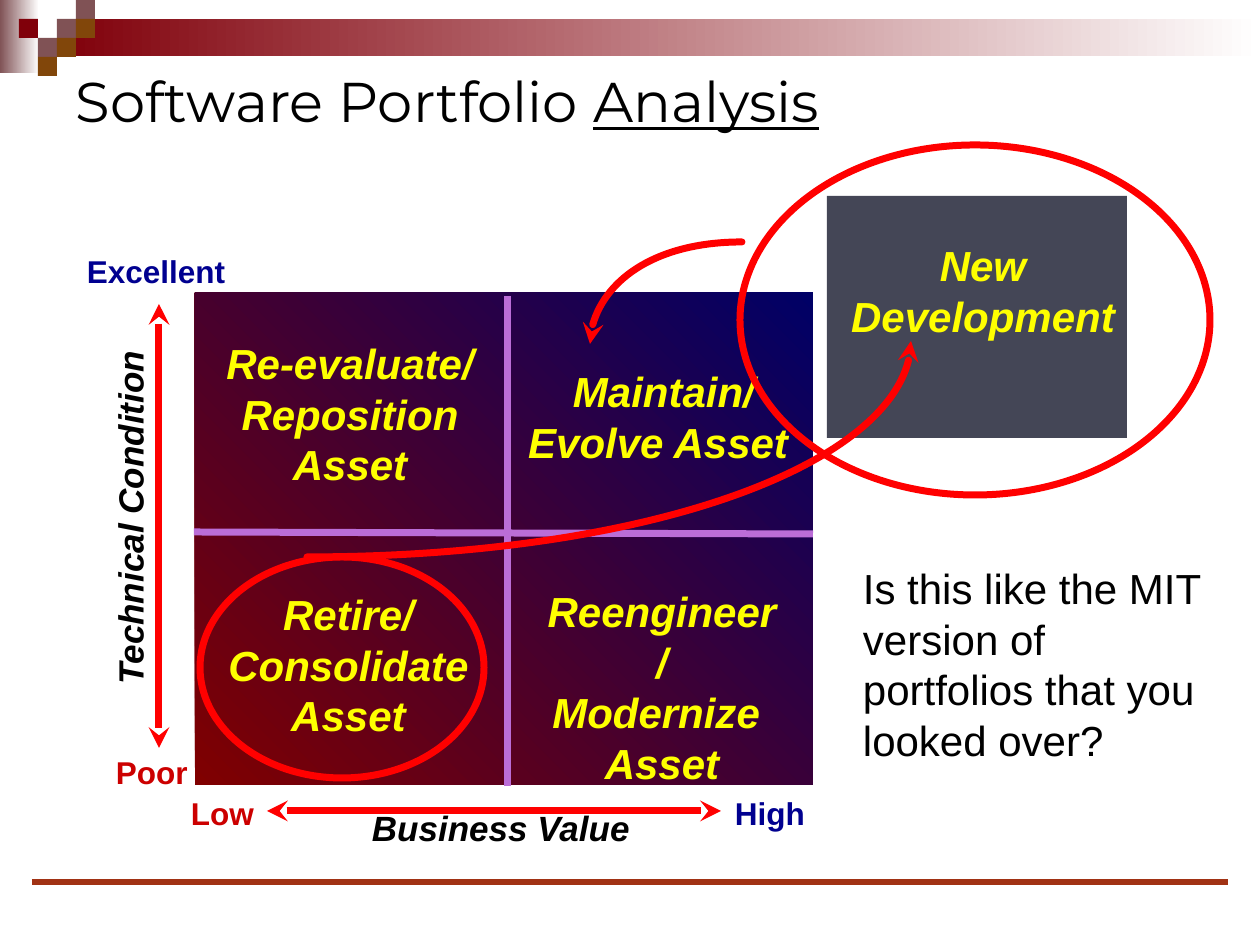
from lxml.etree import SubElement
from pptx import Presentation
from pptx.dml.color import RGBColor
from pptx.enum.shapes import MSO_CONNECTOR as Connector, MSO_SHAPE as Shape
from pptx.enum.text import MSO_ANCHOR as Anchor, PP_ALIGN as Align
from pptx.oxml.ns import qn
from pptx.util import Emu, Pt

EMU_PER_PX = 914400 / 126

BLACK = RGBColor(0x00, 0x00, 0x00)
WHITE = RGBColor(0xFF, 0xFF, 0xFF)
RED = RGBColor(0xFF, 0x00, 0x00)
YELLOW = RGBColor(0xFF, 0xFF, 0x00)
NAVY = RGBColor(0x00, 0x00, 0x90)
CRIMSON = RGBColor(0xCC, 0x00, 0x00)
LILAC = RGBColor(0xBB, 0x6D, 0xD7)
SLATE = RGBColor(0x44, 0x46, 0x56)
MAROON = RGBColor(0x80, 0x00, 0x0A)
MAUVE = RGBColor(0x80, 0x52, 0x55)
BROWN = RGBColor(0x81, 0x46, 0x0A)
RUST = RGBColor(0xA1, 0x32, 0x14)
MATRIX_RED = RGBColor(0x80, 0x00, 0x00)
MATRIX_BLUE = RGBColor(0x00, 0x00, 0x66)

# Mosaic tiles as (column, row, colour) on a grid of 19 px
TILE = 19
TILES = [(3, 1, MAUVE), (4, 0, MAUVE), (4, 1, BROWN), (2, 2, MAUVE),
         (1, 1, MAROON), (3, 2, BROWN), (2, 3, BROWN)]

# Gradient boxes: left, top, width, height, first colour, last colour, angle
HEADER_BANDS = [(0, 0, 39, 73, MAUVE, WHITE, 0),
                (57, 19, 1203, 37, MAROON, WHITE, 0)]
MATRIX = (195, 293, 618, 492, MATRIX_RED, MATRIX_BLUE, 45)
NEW_DEVELOPMENT = (827, 196, 300, 242)

# Text, left, top, width, height, colour
SCALE_ENDS = [("High", 720, 786, 104, 53, NAVY),
              ("Excellent", 72, 244, 174, 53, NAVY),
              ("Low", 176, 786, 98, 53, CRIMSON),
              ("Poor", 101, 745, 105, 53, CRIMSON)]
# Text, left, top, width, height, rotation
AXIS_TITLES = [("Technical Condition", -58, 483, 375, 58, 270),
               ("Business Value", 357, 798, 300, 58, 0)]
# Text, left, top, width, height
STRATEGIES = [("Re-evaluate/\vReposition\nAsset", 208, 330, 284, 166),
              ("Maintain/\vEvolve Asset ", 512, 358, 304, 116),
              ("Retire/\vConsolidate\nAsset", 211, 581, 275, 166),
              ("Reengineer /\vModernize \vAsset", 522, 578, 280, 166),
              ("New\vDevelopment", 834, 232, 298, 116)]
QUESTION = "Is this like the MIT version of portfolios that you looked over?"

# Start x, start y, end x, end y
DIVIDERS = [(508, 296, 508, 786), (194, 532, 813, 534)]
AXES = [(159, 304, 159, 748), (267, 811, 721, 811)]
ELLIPSES = [(200, 557, 284, 221), (740, 145, 470, 350)]
# Arrow tip first; each curve leaves the tip vertically
CURVES = [(911, 341, 307, 557), (590, 344, 742, 242)]
CURVATURE = 0.55


def px(value):
    return Emu(round(value * EMU_PER_PX))


def add_box(slide, kind, left, top, width, height):
    shape = slide.shapes.add_shape(kind, px(left), px(top), px(width), px(height))
    shape.shadow.inherit = False
    shape.line.fill.background()
    return shape


def fill_solid(shape, color):
    shape.fill.solid()
    shape.fill.fore_color.rgb = color


def add_gradient(slide, left, top, width, height, first, last, angle):
    fill = add_box(slide, Shape.RECTANGLE, left, top, width, height).fill
    fill.gradient()
    fill.gradient_angle = angle
    for stop, color in zip(fill.gradient_stops, (first, last)):
        stop.color.rgb = color


def style_line(shape, color, width, ends=()):
    """Colour the outline, put stealth heads on the named ends, return its XML."""
    shape.line.color.rgb = color
    shape.line.width = Pt(width)
    outline = shape._element.spPr.find(qn("a:ln"))
    for end in ends:
        SubElement(outline, qn(f"a:{end}"), type="stealth")
    return outline


def add_line(slide, points, color, width, ends=()):
    line = slide.shapes.add_connector(Connector.STRAIGHT, *map(px, points))
    style_line(line, color, width, ends)
    SubElement(line._element.spPr, qn("a:effectLst"))


def add_curve(slide, x1, y1, x2, y2):
    """Draw a quarter ellipse as one Bezier segment with a head at its start."""
    controls = [(x1, y1 + (y2 - y1) * CURVATURE), (x2 + (x1 - x2) * CURVATURE, y2), (x2, y2)]
    builder = slide.shapes.build_freeform(px(x1), px(y1))
    builder.add_line_segments([(px(x), px(y)) for x, y in controls], close=False)
    curve = builder.convert_to_shape()
    curve.shadow.inherit = False
    curve.fill.background()
    segments = list(curve._element.iter(qn("a:lnTo")))
    bezier = SubElement(segments[0].getparent(), qn("a:cubicBezTo"))
    for segment in segments:
        bezier.append(segment[0])
        segment.getparent().remove(segment)
    style_line(curve, RED, 4, ["headEnd"]).set("cap", "rnd")


def add_text(slide, text, left, top, width, height, size, color=BLACK, bold=True,
             italic=False, align=Align.LEFT, font="Arial", margins=(15, 8)):
    box = slide.shapes.add_textbox(px(left), px(top), px(width), px(height))
    frame = box.text_frame
    frame.word_wrap = True
    frame.margin_left = frame.margin_right = px(margins[0])
    frame.margin_top = frame.margin_bottom = px(margins[1])
    frame.text = text
    for paragraph in frame.paragraphs:
        paragraph.alignment = align
        paragraph.font.name = font
        paragraph.font.size = Pt(size)
        paragraph.font.bold = bold
        paragraph.font.italic = italic
        paragraph.font.color.rgb = color
    return box


def add_header(slide):
    for band in HEADER_BANDS:
        add_gradient(slide, *band)
    for column, row, color in TILES:
        tile = add_box(slide, Shape.RECTANGLE, column * TILE, row * TILE, TILE, TILE)
        fill_solid(tile, color)
    add_line(slide, (32, 882, 1228, 882), RUST, 3)
    title = add_text(slide, "Software Portfolio ", 63, 53, 1134, 95, 32, bold=False,
                     font="Montserrat", margins=(13, 6))
    title.text_frame.vertical_anchor = Anchor.MIDDLE
    underlined = title.text_frame.paragraphs[0].add_run()
    underlined.text = "Analysis"
    underlined.font.underline = True


def add_portfolio(slide):
    add_gradient(slide, *MATRIX)
    for divider in DIVIDERS:
        add_line(slide, divider, LILAC, 4)
    fill_solid(add_box(slide, Shape.RECTANGLE, *NEW_DEVELOPMENT), SLATE)
    for *label, color in SCALE_ENDS:
        add_text(slide, *label, 18, color)
    for *label, rotation in AXIS_TITLES:
        add_text(slide, *label, 20, italic=True).rotation = rotation
    for strategy in STRATEGIES:
        add_text(slide, *strategy, 24, YELLOW, italic=True, align=Align.CENTER)
    for axis in AXES:
        add_line(slide, axis, RED, 4, ["headEnd", "tailEnd"])
    for ellipse in ELLIPSES:
        ring = add_box(slide, Shape.OVAL, *ellipse)
        ring.fill.background()
        style_line(ring, RED, 4)
    for curve in CURVES:
        add_curve(slide, *curve)


def main():
    presentation = Presentation()
    presentation.slide_width, presentation.slide_height = px(1260), px(945)
    slide = presentation.slides.add_slide(presentation.slide_layouts[6])
    add_header(slide)
    add_portfolio(slide)
    add_text(slide, QUESTION, 850, 557, 368, 217, 24, bold=False, margins=(13, 6))
    presentation.save("out.pptx")


if __name__ == "__main__":
    main()
